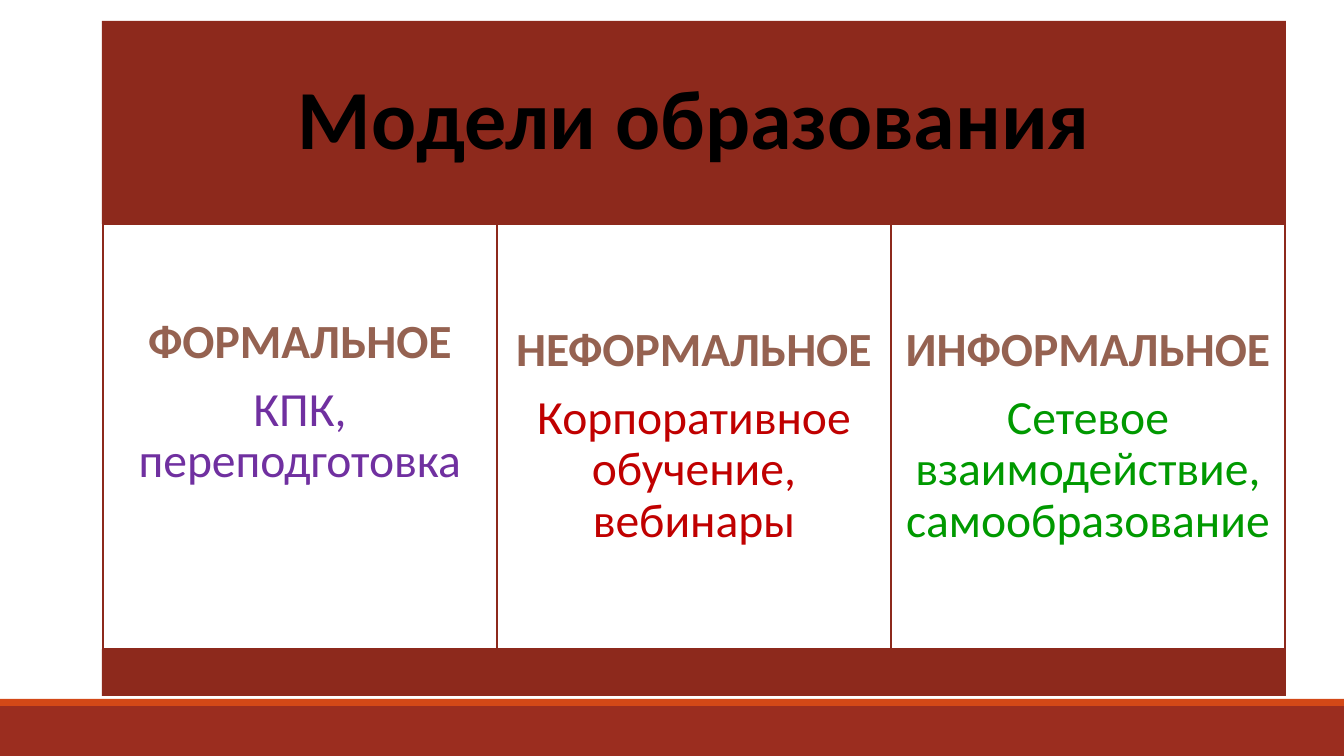
from pptx import Presentation
from pptx.dml.color import RGBColor
from pptx.enum.shapes import MSO_SHAPE
from pptx.enum.text import MSO_ANCHOR, MSO_AUTO_SIZE, PP_ALIGN
from pptx.util import Pt

EMU_PER_PX = 12192000 / 1344
COLORS = {
    "band": "8D291C",
    "base": "9B2D1F",
    "accent": "D34817",
    "panel": "FFFFFF",
    "title": "000000",
    "heading": "956251",
    "formal": "7030A0",
    "nonformal": "C00000",
    "informal": "009900",
}
MODELS = [
    ("ФОРМАЛЬНОЕ", "КПК, переподготовка", "formal", 82),
    ("НЕФОРМАЛЬНОЕ", "Корпоративное обучение, вебинары", "nonformal", 14),
    ("ИНФОРМАЛЬНОЕ", "Сетевое взаимодействие, самообразование", "informal", 14),
]
PANEL_LEFT, PANEL_TOP, PANEL_WIDTH, PANEL_HEIGHT = 103, 224, 394, 425


def px(length):
    return round(length * EMU_PER_PX)


def color(name):
    return RGBColor.from_string(COLORS[name])


def set_attributes(target, values):
    for name, value in values.items():
        setattr(target, name, value)


def paint(shape, fill):
    shape.fill.solid()
    shape.fill.fore_color.rgb = color(fill)


def add_block(slide, left, top, width, height, fill):
    shape = slide.shapes.add_shape(
        MSO_SHAPE.RECTANGLE, px(left), px(top), px(width), px(height))
    shape.shadow.inherit = False
    paint(shape, fill)
    shape.line.fill.background()
    return shape


def format_frame(frame, inset, bottom):
    set_attributes(frame, {
        "word_wrap": True,
        "auto_size": MSO_AUTO_SIZE.NONE,
        "vertical_anchor": MSO_ANCHOR.MIDDLE,
        "margin_left": px(inset),
        "margin_top": px(inset),
        "margin_right": px(inset),
        "margin_bottom": px(bottom),
    })


def write(paragraph, text, size, text_color, bold, space_after=0):
    paragraph.text = text
    set_attributes(paragraph, {
        "alignment": PP_ALIGN.CENTER,
        "line_spacing": 0.9,
        "space_before": Pt(0),
        "space_after": Pt(space_after),
    })
    font = paragraph.runs[0].font
    set_attributes(font, {"name": "Calibri", "size": Pt(size), "bold": bold})
    font.color.rgb = color(text_color)


def add_title(slide, text):
    title = slide.shapes.title
    set_attributes(title, {
        "left": px(102), "top": px(21), "width": px(1184), "height": px(203)})
    paint(title, "band")
    format_frame(title.text_frame, 25, 25)
    write(title.text_frame.paragraphs[0], text, 60, "title", True)


def add_model(slide, column, heading, description, text_color, bottom):
    panel = add_block(slide, PANEL_LEFT + column * PANEL_WIDTH, PANEL_TOP,
                      PANEL_WIDTH, PANEL_HEIGHT, "panel")
    panel.line.color.rgb = color("band")
    panel.line.width = Pt(1.25)
    frame = panel.text_frame
    format_frame(frame, 14, bottom)
    write(frame.paragraphs[0], heading, 34, "heading", True, 12)
    write(frame.add_paragraph(), description, 34, text_color, False)


def main():
    presentation = Presentation()
    presentation.slide_width = px(1344)
    presentation.slide_height = px(756)
    slide = presentation.slides.add_slide(presentation.slide_layouts[5])
    add_block(slide, 0, 706, 1344, 50, "base")
    add_block(slide, 0, 699, 1344, 7, "accent")
    add_title(slide, "Модели образования")
    for column, model in enumerate(MODELS):
        add_model(slide, column, *model)
    add_block(slide, 102, 649, 1184, 47, "band")
    presentation.save("out.pptx")


if __name__ == "__main__":
    main()
